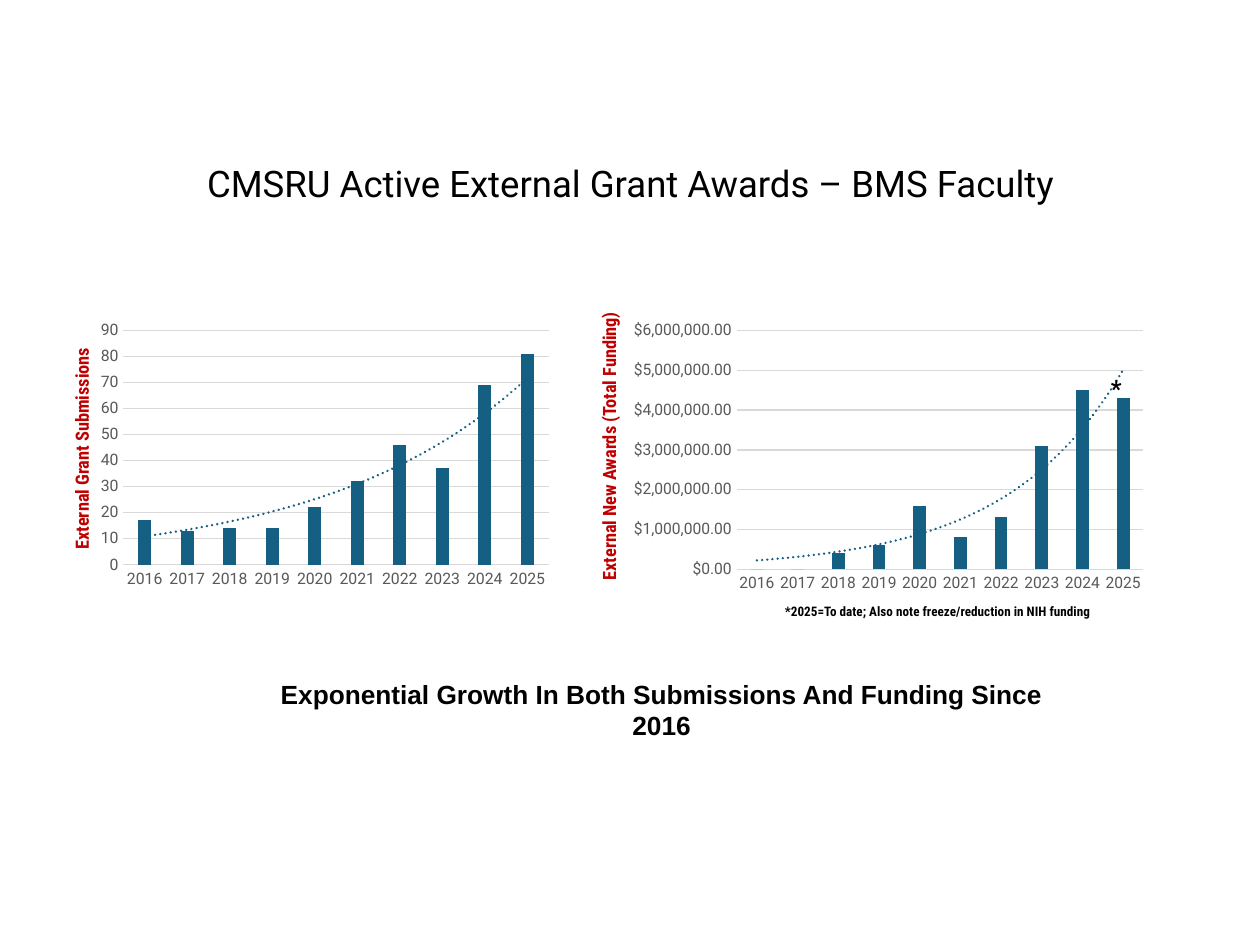
from dataclasses import dataclass

from lxml import etree
from pptx import Presentation
from pptx import util as u
from pptx.chart.data import CategoryChartData
from pptx.dml.color import RGBColor
from pptx.enum import chart as ch, text as t

HUES = {"ink": "000000", "red": "C00000", "grey": "595959",
        "rule": "D9D9D9", "bar": "156082"}
NS = 'xmlns:c="http://schemas.openxmlformats.org/drawingml/2006/chart" ' \
     'xmlns:a="http://schemas.openxmlformats.org/drawingml/2006/main"'
YEARS = [str(year) for year in range(2016, 2026)]
LEFT, MID = t.PP_ALIGN.LEFT, t.PP_ALIGN.CENTER


@dataclass
class Label:
    words: str
    box: tuple
    size: float
    font: str = "Roboto Condensed"
    hue: str = "ink"
    bold: bool = True
    align: int = LEFT
    turn: int = 0


@dataclass
class Graph:
    box: tuple
    plot: tuple
    vals: list
    form: str = "General"
    top: float | None = None


TITLE = Label("CMSRU Active External Grant Awards – BMS Faculty",
              (104.4, 102.2, 511.9, 38.2), 20.9, "Roboto", bold=False, align=MID)
LABELS = [
    Label("Exponential Growth In Both Submissions And Funding Since 2016",
          (135.4, 383.8, 485.3, 43.9), 15, "Arial", align=MID),
    Label("*2025=To date; Also note freeze/reduction in NIH funding",
          (441.4, 341.3, 206.6, 16.6), 7.5),
    Label("External New Awards (Total Funding)",
          (259.9, 240.5, 176.4, 20.2), 10.5, hue="red", turn=270),
    Label("External Grant Submissions",
          (-25.2, 239, 144, 20.2), 10.5, hue="red", turn=270),
]
STAR = Label("*", (627.8, 210.2, 17.3, 23.8), 13.5)
GRAPHS = [
    Graph((56.2, 165.6, 270, 185.8), (0.053, 0.125, 0.9, 0.721),
          [17, 13, 14, 14, 22, 32, 46, 37, 69, 81]),
    Graph((362.2, 177.1, 291.6, 162), (0.193, 0.073, 0.807, 0.842),
          [0, 0, 400000, 600000, 1600000,
           800000, 1300000, 3100000, 4500000, 4300000],
          '"$"#,##0.00', 6000000),
]


def rgb(hue: str) -> RGBColor:
    return RGBColor.from_string(HUES[hue])


def pts(box: tuple) -> list:
    return [u.Pt(n) for n in box]


def write(slide, lab: Label):
    box = slide.shapes.add_textbox(*pts(lab.box))
    box.rotation = lab.turn
    frame = box.text_frame
    frame.word_wrap = True
    frame.auto_size = t.MSO_AUTO_SIZE.SHAPE_TO_FIT_TEXT
    para = frame.paragraphs[0]
    para.alignment = lab.align
    run = para.add_run()
    run.text = lab.words
    font = run.font
    font.name, font.size, font.bold = lab.font, u.Pt(lab.size), lab.bold
    font.color.rgb = rgb(lab.hue)
    return frame


def head(slide, lab: Label) -> None:
    """Write the title, raised one line above the foot of its box."""
    frame = write(slide, lab)
    frame.auto_size = t.MSO_AUTO_SIZE.NONE
    frame.vertical_anchor = t.MSO_ANCHOR.BOTTOM
    frame.margin_top, frame.margin_bottom = 0, u.Pt(23)
    frame.paragraphs[0].line_spacing = 0.9


def trend(series) -> None:
    """Add a dotted exponential trend line to a series."""
    line = etree.fromstring(
        f'<c:trendline {NS}><c:spPr><a:ln w="{u.Pt(1.5)}" cap="rnd"><a:solidFill>'
        f'<a:srgbClr val="{HUES["bar"]}"/></a:solidFill><a:prstDash val="sysDot"/>'
        '</a:ln></c:spPr><c:trendlineType val="exp"/><c:dispRSqr val="0"/>'
        '<c:dispEq val="0"/></c:trendline>')
    series._element.find("{*}cat").addprevious(line)


def fix(chart, plot: tuple) -> None:
    """Pin the inner plot area to fractions of the chart."""
    area = chart._chartSpace.find(".//{*}plotArea")
    for old in area.findall("{*}layout"):
        area.remove(old)
    edges = "".join(f'<c:{key} val="{val}"/>' for key, val in zip("xywh", plot))
    area.insert(0, etree.fromstring(
        f'<c:layout {NS}><c:manualLayout><c:layoutTarget val="inner"/>'
        '<c:xMode val="edge"/><c:yMode val="edge"/>'
        f'{edges}</c:manualLayout></c:layout>'))


def rule(line) -> None:
    line.color.rgb = rgb("rule")
    line.width = u.Pt(0.75)


def draw(slide, graph: Graph) -> None:
    data = CategoryChartData(number_format=graph.form)
    data.categories = YEARS
    data.add_series("Series 1", graph.vals)
    chart = slide.shapes.add_chart(
        ch.XL_CHART_TYPE.COLUMN_CLUSTERED, *pts(graph.box), data).chart
    chart.has_legend = chart.has_title = False
    chart.font.name, chart.font.size = "Roboto", u.Pt(10)
    chart.font.color.rgb = rgb("ink")
    cat, val = chart.category_axis, chart.value_axis
    for axis in (cat, val):
        axis.major_tick_mark = axis.minor_tick_mark = ch.XL_TICK_MARK.NONE
        font = axis.tick_labels.font
        font.name, font.size = "Roboto", u.Pt(9)
        font.color.rgb = rgb("grey")
    rule(cat.format.line)
    val.format.line.fill.background()
    val.has_major_gridlines = True
    rule(val.major_gridlines.format.line)
    val.tick_labels.number_format = graph.form
    val.tick_labels.number_format_is_linked = False
    val.minimum_scale = 0
    if graph.top:
        val.maximum_scale = graph.top
    bars = chart.plots[0]
    bars.gap_width, bars.overlap = 219, -27
    bars.vary_by_categories = False
    series = bars.series[0]
    series.format.fill.solid()
    series.format.fill.fore_color.rgb = rgb("bar")
    trend(series)
    fix(chart, graph.plot)


def main() -> None:
    deck = Presentation()
    deck.slide_width, deck.slide_height = u.Pt(720), u.Pt(540)
    slide = deck.slides.add_slide(deck.slide_layouts[6])
    head(slide, TITLE)
    for graph in GRAPHS:
        draw(slide, graph)
    for lab in LABELS + [STAR]:
        write(slide, lab)
    deck.save("out.pptx")


if __name__ == "__main__":
    main()
